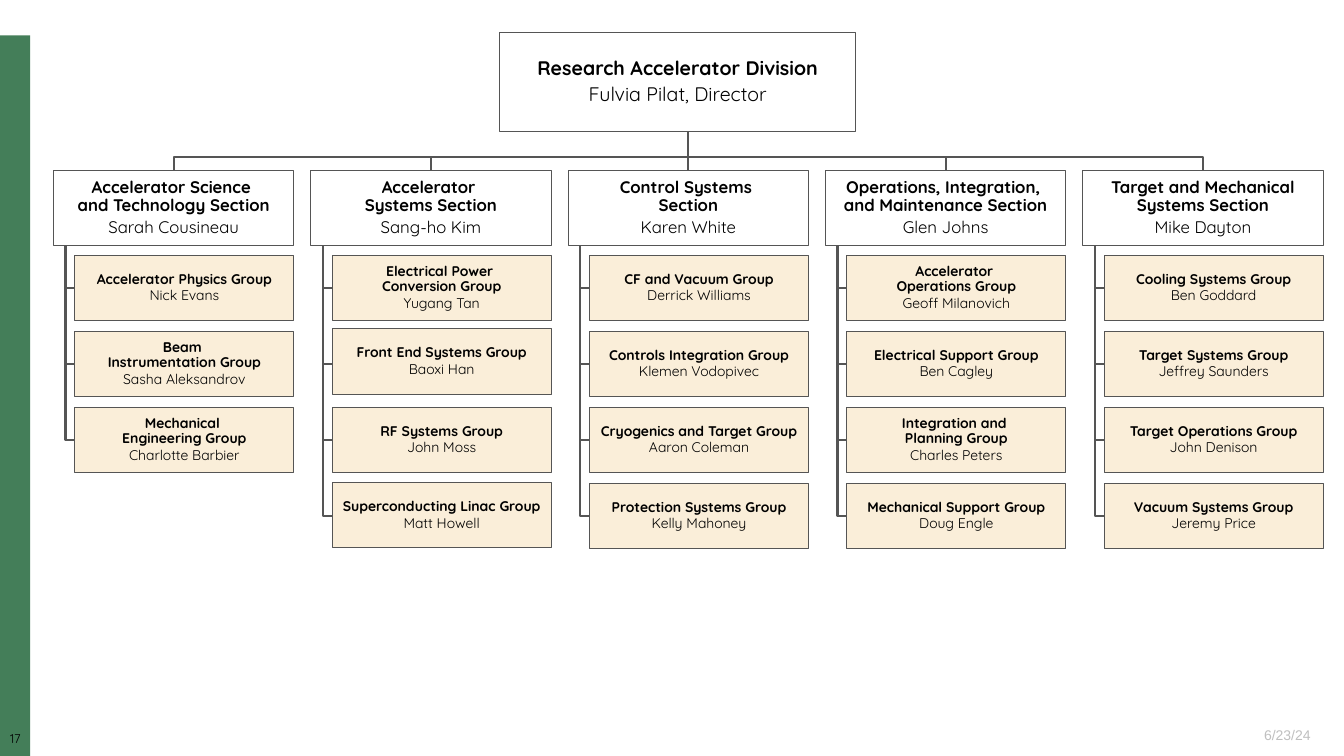
from pptx import Presentation
from pptx.dml.color import RGBColor
from pptx.enum.shapes import MSO_CONNECTOR, MSO_SHAPE
from pptx.enum.text import MSO_ANCHOR, PP_ALIGN
from pptx.oxml.ns import qn
from pptx.util import Pt
from lxml.etree import SubElement

HUES = {"bar": "447E59", "group": "FAEED9", "head": "FFFFFF",
        "line": "555555", "text": "000000", "date": "BFBFBF"}
FONT = "Quicksand"

LEFT, PITCH = 38.3, 183.8           # section columns
TOP, WIDE, HIGH = 121.8, 171.6, 53.8
STEP, FIRST = 54.3, 182.4           # group rows
INSET, SPINE = 15.1, 8.5            # group edge and spine, from the column edge
TALL = 46.8
BUS = 112.2
ROOT = (357.1, 23.3, 254, 70.5)

SECTIONS = [
    ("Accelerator Science \nand Technology Section", "Sarah Cousineau", [
        ("Accelerator Physics Group", "Nick Evans"),
        ("Beam \nInstrumentation Group", "Sasha Aleksandrov"),
        ("Mechanical \nEngineering Group", "Charlotte Barbier")]),
    ("Accelerator \nSystems Section", "Sang-ho Kim", [
        ("Electrical Power \nConversion Group", "Yugang Tan"),
        ("Front End Systems Group", "Baoxi Han"),
        ("RF Systems Group", "John Moss"),
        ("Superconducting Linac Group", "Matt Howell")]),
    ("Control Systems \nSection", "Karen White", [
        ("CF and Vacuum Group", "Derrick Williams"),
        ("Controls Integration Group", "Klemen Vodopivec"),
        ("Cryogenics and Target Group", "Aaron Coleman"),
        ("Protection Systems Group", "Kelly Mahoney")]),
    ("Operations, Integration, \nand Maintenance Section", "Glen Johns", [
        ("Accelerator \nOperations Group", "Geoff Milanovich"),
        ("Electrical Support Group", "Ben Cagley"),
        ("Integration and \nPlanning Group", "Charles Peters"),
        ("Mechanical Support Group", "Doug Engle")]),
    ("Target and Mechanical Systems Section", "Mike Dayton", [
        ("Cooling Systems Group", "Ben Goddard"),
        ("Target Systems Group", "Jeffrey Saunders"),
        ("Target Operations Group", "John Denison"),
        ("Vacuum Systems Group", "Jeremy Price")]),
]
NUDGE = {"Front End Systems Group": -2, "Superconducting Linac Group": -0.7}


def paint(color, hue):
    color.rgb = RGBColor.from_string(HUES[hue])


def write(para, text, size, bold=False, hue="text", font=FONT):
    for i, part in enumerate(text.split("\n")):
        if i:
            para.add_line_break()
        run = para.add_run()
        run.text = part
        run.font.size, run.font.bold, run.font.name = Pt(size), bold, font
        paint(run.font.color, hue)


def pad(frame, side, edge):
    frame.margin_left = frame.margin_right = Pt(side)
    frame.margin_top = frame.margin_bottom = Pt(edge)


def block(slide, place, hue):
    shape = slide.shapes.add_shape(MSO_SHAPE.RECTANGLE, *map(Pt, place))
    shape.shadow.inherit = False
    shape.fill.solid()
    paint(shape.fill.fore_color, hue)
    shape.line.fill.background()
    return shape


def card(slide, place, hue, name, lead, size, gap, side=3.6):
    """Draw an outlined box with a unit's bold name above its leader."""
    shape = block(slide, place, hue)
    paint(shape.line.color, "line")
    shape.line.width = Pt(0.75)
    frame = shape.text_frame
    frame.word_wrap = True
    frame.vertical_anchor = MSO_ANCHOR.MIDDLE
    pad(frame, side, 3.6)
    title, owner = frame.paragraphs[0], frame.add_paragraph()
    for para in (title, owner):
        para.alignment = PP_ALIGN.CENTER
        para.line_spacing = 0.9
    owner.space_before = Pt(gap)
    write(title, name, size, bold=True)
    write(owner, lead, size)


def line(slide, *ends):
    link = slide.shapes.add_connector(MSO_CONNECTOR.STRAIGHT, *map(Pt, ends))
    paint(link.line.color, "line")
    link.line.width = Pt(1.5)
    SubElement(link._element.spPr, qn("a:effectLst"))


def bend(slide, start, *turns):
    """Draw an open line with corners."""
    pen = slide.shapes.build_freeform(*map(Pt, start))
    pen.add_line_segments([tuple(map(Pt, p)) for p in turns], close=False)
    shape = pen.convert_to_shape()
    shape.shadow.inherit = False
    shape.fill.background()
    paint(shape.line.color, "line")
    shape.line.width = Pt(1.5)


def label(slide, place, text, size, align, side, hue="text", font=FONT):
    frame = slide.shapes.add_textbox(*map(Pt, place)).text_frame
    frame.word_wrap = True
    frame.vertical_anchor = MSO_ANCHOR.MIDDLE
    pad(frame, side, 0)
    frame.paragraphs[0].alignment = align
    write(frame.paragraphs[0], text, size, hue=hue, font=font)


def branch(slide, left, name, lead, groups):
    """Draw one section with its groups hung from a spine."""
    spine, edge = left + SPINE, left + INSET
    tops = [FIRST + i * STEP for i in range(len(groups))]
    mids = [top + TALL / 2 for top in tops]
    bend(slide, (spine, TOP + HIGH), (spine, mids[-1]), (edge, mids[-1]))
    for mid in mids[:-1]:
        line(slide, spine, mid, edge, mid)
    for top, (team, head) in zip(tops, groups):
        place = (edge, top + NUDGE.get(team, 0), WIDE - INSET, TALL)
        card(slide, place, "group", team, head, 10, 1)
    card(slide, (left, TOP, WIDE, HIGH), "head", name, lead, 12, 3)


def main():
    deck = Presentation()
    deck.slide_width, deck.slide_height = Pt(960), Pt(540)
    slide = deck.slides.add_slide(deck.slide_layouts[6])

    block(slide, (0, 25.2, 21.6, 514.8), "bar")
    label(slide, (0, 521.3, 22, 12.2), "17", 9, PP_ALIGN.CENTER, 0)
    label(slide, (727.2, 514.8, 216, 20.9), "6/23/24", 10, PP_ALIGN.RIGHT,
          7.2, "date", "Arial")

    lefts = [LEFT + i * PITCH for i in range(len(SECTIONS))]
    mids = [left + WIDE / 2 for left in lefts]
    bend(slide, (mids[0], TOP), (mids[0], BUS), (mids[-1], BUS),
         (mids[-1], TOP))
    for mid in mids[1:-1]:
        line(slide, mid, BUS, mid, TOP)
    hub = mids[len(mids) // 2]
    line(slide, hub, ROOT[1] + ROOT[3], hub, BUS)
    card(slide, ROOT, "head", "Research Accelerator Division",
         "Fulvia Pilat, Director", 14, 3, side=7.2)
    for left, section in zip(lefts, SECTIONS):
        branch(slide, left, *section)

    deck.save("out.pptx")


if __name__ == "__main__":
    main()
